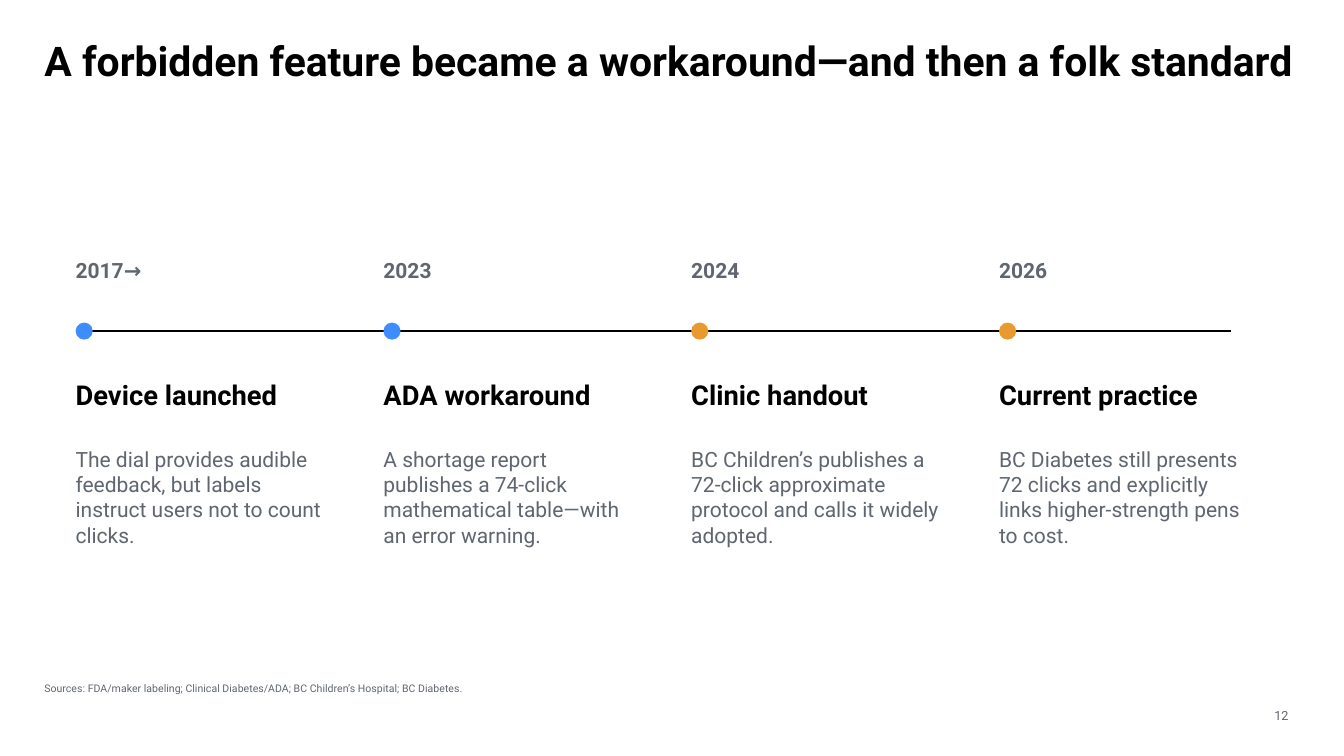
from dataclasses import dataclass

from lxml.etree import SubElement
from pptx import Presentation
from pptx.dml.color import RGBColor
from pptx.enum.shapes import MSO_CONNECTOR as Connector, MSO_SHAPE as Shape
from pptx.enum.text import MSO_ANCHOR as Anchor, MSO_AUTO_SIZE as AutoSize, PP_ALIGN as Align
from pptx.oxml.ns import qn
from pptx.util import Inches, Pt


@dataclass(frozen=True)
class Theme:
    """Colours, font and type sizes of the deck."""
    font: str = "Roboto"
    ink: str = "000000"
    muted: str = "5F6670"
    blue: str = "3D8DFF"
    amber: str = "E99A2F"
    title: float = 29.2
    heading: float = 19.5
    body: float = 15
    number: float = 9
    source: float = 7.5


THEME = Theme()

MILESTONES = [
    ("2017→", THEME.blue, "Device launched",
     "The dial provides audible feedback, but labels instruct users not to count clicks."),
    ("2023", THEME.blue, "ADA workaround",
     "A shortage report publishes a 74-click mathematical table—with an error warning."),
    ("2024", THEME.amber, "Clinic handout",
     "BC Children’s publishes a 72-click approximate protocol and calls it widely adopted."),
    ("2026", THEME.amber, "Current practice",
     "BC Diabetes still presents 72 clicks and explicitly links higher-strength pens to cost."),
]


def write(box, text, size, color, bold=False, align=Align.LEFT, anchor=Anchor.TOP):
    """Fill a box with one formatted paragraph and no margins."""
    frame = box.text_frame
    frame.text = text
    frame.word_wrap = True
    frame.auto_size = AutoSize.NONE
    frame.vertical_anchor = anchor
    frame.margin_left = frame.margin_right = frame.margin_top = frame.margin_bottom = 0
    para = frame.paragraphs[0]
    para.alignment = align
    font = para.runs[0].font
    font.name, font.size, font.bold = THEME.font, Pt(size), bold
    font.color.rgb = RGBColor.from_string(color)


def add_label(page, left, top, width, height, *content, **style):
    """Add a text box at the given place in inches."""
    box = page.shapes.add_textbox(Inches(left), Inches(top), Inches(width), Inches(height))
    write(box, *content, **style)


def add_title(page, text, left, top, width, height):
    """Place and format the title placeholder."""
    title = page.shapes.title
    title.left, title.top = Inches(left), Inches(top)
    title.width, title.height = Inches(width), Inches(height)
    write(title, text, THEME.title, THEME.ink, bold=True)


def add_axis(page, left, top, width):
    """Draw the horizontal time axis."""
    axis = page.shapes.add_connector(
        Connector.STRAIGHT, Inches(left), Inches(top), Inches(left + width), Inches(top))
    axis.line.color.rgb = RGBColor.from_string(THEME.ink)
    axis.line.width = Pt(1.5)
    SubElement(axis.element.spPr, qn("a:effectLst"))


def add_milestone(page, milestone, left, top, width):
    """Stack year, dot, heading and description in one column."""
    year, color, heading, description = milestone
    size = 0.17
    dot = page.shapes.add_shape(
        Shape.OVAL, Inches(left), Inches(top + 0.65), Inches(size), Inches(size))
    dot.shadow.inherit = False
    dot.fill.solid()
    dot.fill.fore_color.rgb = RGBColor.from_string(color)
    dot.line.fill.background()
    add_label(page, left, top, 1.77, 0.35, year, THEME.body, THEME.muted, bold=True)
    add_label(page, left, top + 1.2, width, 0.5, heading, THEME.heading, THEME.ink, bold=True)
    add_label(page, left, top + 1.88, width, 1.61, description, THEME.body, THEME.muted)


def add_timeline(page, left, top, width):
    """Draw the axis and its evenly spaced milestones."""
    add_axis(page, left, top + 0.73, width)
    pitch = 3.053
    for index, milestone in enumerate(MILESTONES):
        add_milestone(page, milestone, left + index * pitch, top, 2.5)


def add_footer(page, left, top, width):
    """Add the source line and the page number."""
    add_label(page, left, top, 11.67, 0.33,
              "Sources: FDA/maker labeling; Clinical Diabetes/ADA; "
              "BC Children’s Hospital; BC Diabetes.", THEME.source, THEME.muted)
    add_label(page, left + width - 0.44, top + 0.21, 0.44, 0.19, "12",
              THEME.number, THEME.muted, align=Align.RIGHT, anchor=Anchor.BOTTOM)


def main():
    """Build and save the timeline slide."""
    deck = Presentation()
    deck.slide_width, deck.slide_height = Inches(13.33), Inches(7.5)
    page = deck.slides.add_slide(deck.slide_layouts[5])
    add_title(page, "A forbidden feature became a workaround—and then a folk standard",
              0.44, 0.35, 12.46, 0.96)
    add_timeline(page, 0.75, 2.55, 11.46)
    add_footer(page, 0.44, 6.77, 12.34)
    deck.save("out.pptx")


if __name__ == "__main__":
    main()
